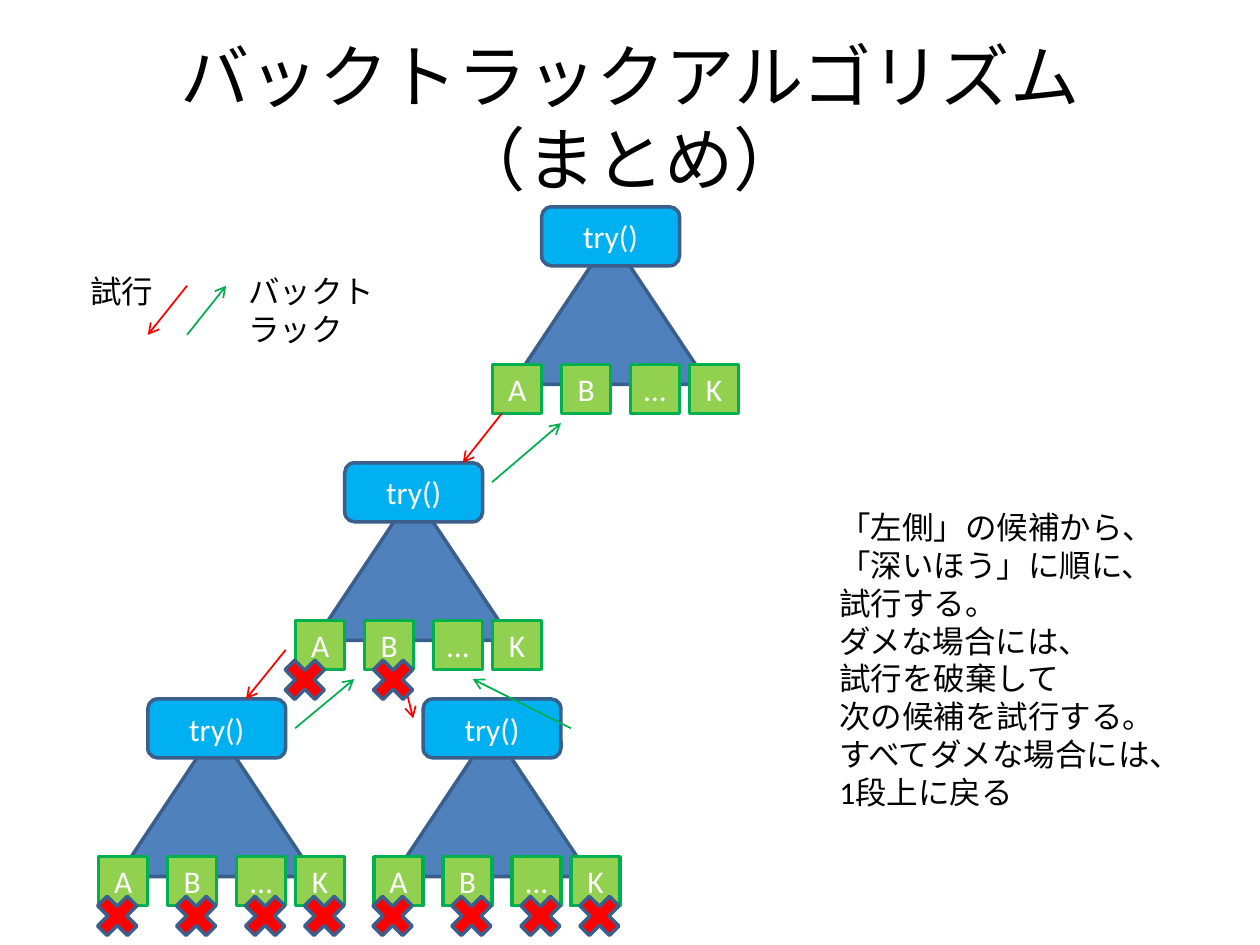
from lxml.etree import SubElement
from pptx import Presentation
from pptx.dml.color import RGBColor
from pptx.enum.shapes import MSO_CONNECTOR, MSO_SHAPE
from pptx.enum.text import MSO_ANCHOR, PP_ALIGN
from pptx.oxml.ns import qn
from pptx.util import Cm, Pt

COLORS = {
    "text": "000000",
    "label": "FFFFFF",
    "branch": "4F81BD",
    "outline": "3A5F8C",
    "call": "00B0F0",
    "choice": "92D050",
    "backtrack": "00B050",
    "attempt": "FF0000",
}

deck = Presentation()
deck.slide_width, deck.slide_height = Cm(25.4), Cm(19.05)
page = deck.slides.add_slide(deck.slide_layouts[6])


def add_box(kind, left, top, width, height, fill, line, text=""):
    box = page.shapes.add_shape(kind, Cm(left), Cm(top), Cm(width), Cm(height))
    box.shadow.inherit = False
    box.fill.solid()
    box.fill.fore_color.rgb = RGBColor.from_string(COLORS[fill])
    box.line.color.rgb = RGBColor.from_string(COLORS[line])
    box.line.width = Pt(2)
    if text:
        box.text_frame.vertical_anchor = MSO_ANCHOR.MIDDLE
        para = box.text_frame.paragraphs[0]
        para.text = text
        para.alignment = PP_ALIGN.CENTER
        para.font.name = "Calibri"
        para.font.size = Pt(18)
        para.font.color.rgb = RGBColor.from_string(COLORS["label"])


def add_text(left, top, width, height, lines, size=18, align=PP_ALIGN.LEFT, anchor=MSO_ANCHOR.TOP):
    frame = page.shapes.add_textbox(Cm(left), Cm(top), Cm(width), Cm(height)).text_frame
    frame.word_wrap = True
    frame.vertical_anchor = anchor
    frame.text = "\n".join(lines)
    for para in frame.paragraphs:
        para.alignment = align
        para.font.name = "Calibri"
        para.font.size = Pt(size)
        para.font.color.rgb = RGBColor.from_string(COLORS["text"])


add_text(1.27, 0.76, 22.86, 3.18, ["バックトラックアルゴリズム\v（まとめ）"], 39.6, PP_ALIGN.CENTER, MSO_ANCHOR.MIDDLE)
add_text(1.57, 5.36, 1.8, 1.02, ["試行"])
add_text(4.76, 5.36, 4.06, 1.02, ["バックトラック"])
add_text(16.67, 10.12, 6.95, 6.4, [
    "「左側」の候補から、",
    "「深いほう」に順に、",
    "試行する。",
    "ダメな場合には、",
    "試行を破棄して",
    "次の候補を試行する。",
    "すべてダメな場合には、",
    "1段上に戻る",
])

choices = [("A", -0.99), ("B", 0.4), ("…", 1.79), ("K", 2.98)]
all_failed = [-1.19, 0.4, 1.79, 2.98]
trees = [
    (10.92, 4.17, []),
    (6.95, 9.33, [-1.38, 0.4]),
    (2.98, 14.09, all_failed),
    (8.53, 14.09, all_failed),
]
for left, top, failed in trees:
    add_box(MSO_SHAPE.ISOSCELES_TRIANGLE, left - 0.6, top + 0.6, 3.97, 2.98, "branch", "outline")
    add_box(MSO_SHAPE.ROUNDED_RECTANGLE, left, top, 2.78, 1.19, "call", "outline", "try()")
    for name, offset in choices:
        add_box(MSO_SHAPE.RECTANGLE, left + offset, top + 3.18, 0.99, 0.99, "choice", "backtrack", name)

arrows = [
    ("attempt", 3.77, 5.76, 2.98, 6.75),
    ("backtrack", 3.77, 6.75, 4.56, 5.76),
    ("attempt", 10.12, 8.33, 9.33, 9.33),
    ("backtrack", 9.92, 9.72, 11.31, 8.53),
    ("attempt", 5.76, 13.1, 4.96, 14.09),
    ("backtrack", 5.95, 14.68, 7.14, 13.69),
    ("attempt", 8.13, 13.69, 8.33, 14.48),
    ("backtrack", 11.51, 14.68, 9.53, 13.69),
]
for color, *ends in arrows:
    arrow = page.shapes.add_connector(MSO_CONNECTOR.STRAIGHT, *map(Cm, ends))
    arrow.line.color.rgb = RGBColor.from_string(COLORS[color])
    arrow.line.width = Pt(1)
    properties = arrow.element.spPr
    SubElement(properties.find(qn("a:ln")), qn("a:tailEnd"), type="arrow")
    SubElement(properties, qn("a:effectLst"))

for left, top, failed in trees:
    for offset in failed:
        add_box(MSO_SHAPE.MATH_MULTIPLY, left + offset, top + 3.8, 1.15, 1.15, "attempt", "outline")

deck.save("out.pptx")
